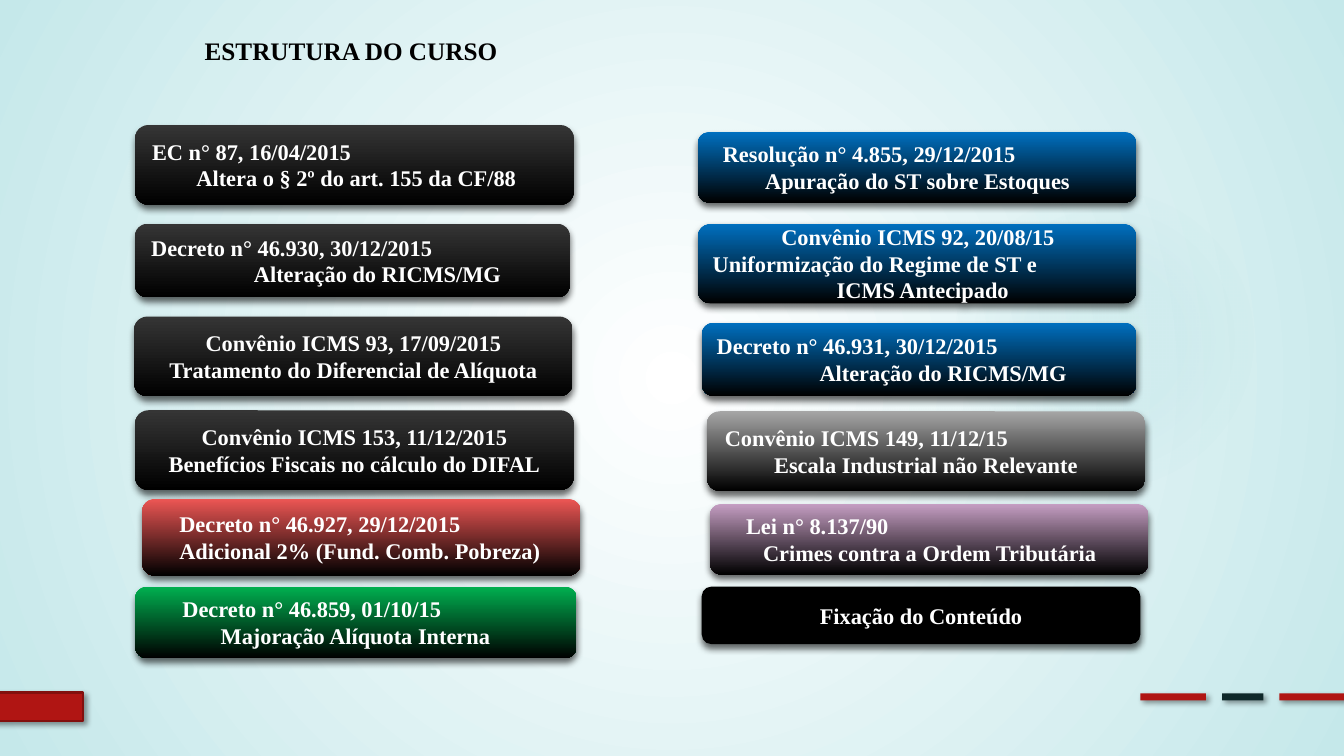
import pptx
import pptx.util
import pptx.dml.color
import pptx.enum.shapes
import pptx.enum.text
import pptx.oxml.ns
import lxml.etree

Inches = pptx.util.Inches
Pt = pptx.util.Pt
RGBColor = pptx.dml.color.RGBColor
SHAPE = pptx.enum.shapes.MSO_SHAPE
ALIGN = pptx.enum.text.PP_ALIGN
MIDDLE = pptx.enum.text.MSO_ANCHOR.MIDDLE
qn = pptx.oxml.ns.qn

BLACK = RGBColor(0x00, 0x00, 0x00)
WHITE = RGBColor(0xFF, 0xFF, 0xFF)
COAL = RGBColor(0x35, 0x35, 0x35)
BLUE = RGBColor(0x00, 0x70, 0xC0)
GREEN = RGBColor(0x00, 0xB0, 0x50)
CORAL = RGBColor(0xED, 0x56, 0x54)
GREY = RGBColor(0xA6, 0xA6, 0xA6)
LILAC = RGBColor(0xC5, 0x9E, 0xC3)
RED = RGBColor(0xB0, 0x15, 0x13)
MAROON = RGBColor(0x82, 0x10, 0x0E)
NAVY = RGBColor(0x0F, 0x28, 0x2A)
TEAL = RGBColor(0x50, 0xB9, 0xC1)
AQUA = RGBColor(0xC5, 0xE8, 0xEA)

FONT = {"name": "Times New Roman", "bold": True}
FRAME = {"margin_left": 0, "margin_right": 0, "margin_top": 0,
         "margin_bottom": 0, "vertical_anchor": MIDDLE, "word_wrap": True}
CARD_SHADE = (60, 5, 3, 90)
BAR_SHADE = (40, 4, 3, 45)

LEFT = [
    ((1.34, 1.24, 4.35, 0.79), COAL,
     [("EC n° 87, 16/04/2015", 0.17), ("Altera o § 2º do art. 155 da CF/88", 0.61)]),
    ((1.34, 2.22, 4.31, 0.73), COAL,
     [("Decreto n° 46.930, 30/12/2015", 0.16), ("Alteração do RICMS/MG", 1.18)]),
    ((1.33, 3.14, 4.35, 0.79), COAL,
     [("Convênio ICMS 93, 17/09/2015", None),
      ("Tratamento do Diferencial de Alíquota", None)]),
    ((1.34, 4.07, 4.35, 0.79), COAL,
     [("Convênio ICMS 153, 11/12/2015", None),
      ("Benefícios Fiscais no cálculo do DIFAL", None)]),
    ((1.41, 4.95, 4.35, 0.76), CORAL,
     [("Decreto n° 46.927, 29/12/2015", 0.37),
      ("Adicional 2% (Fund. Comb. Pobreza)", 0.37)]),
    ((1.34, 5.82, 4.38, 0.71), GREEN,
     [("Decreto n° 46.859, 01/10/15", 0.47), ("Majoração Alíquota Interna", 0.85)]),
]
RIGHT = [
    ((6.92, 1.31, 4.35, 0.7), BLUE,
     [("Resolução n° 4.855, 29/12/2015", 0.25), ("Apuração do ST sobre Estoques", 0.67)]),
    ((6.92, 2.22, 4.35, 0.79), BLUE,
     [("Convênio ICMS 92, 20/08/15", 0.83),
      ("Uniformização do Regime de ST e", 0.15), ("ICMS Antecipado", 1.38)]),
    ((6.96, 3.2, 4.31, 0.73), BLUE,
     [("Decreto n° 46.931, 30/12/2015", 0.15), ("Alteração do RICMS/MG", 1.17)]),
    ((7.01, 4.08, 4.35, 0.79), GREY,
     [("Convênio ICMS 149, 11/12/15", 0.18), ("Escala Industrial não Relevante", 0.67)]),
    ((7.04, 5, 4.35, 0.7), LILAC,
     [("Lei n° 8.137/90", 0.36), ("Crimes contra a Ordem Tributária", 0.53)]),
    ((6.96, 5.82, 4.35, 0.57), BLACK, [("Fixação do Conteúdo", None)]),
]


def apply(thing, values):
    for name, value in values.items():
        setattr(thing, name, value)


def add(parent, tag, **values):
    node = lxml.etree.SubElement(parent, qn(tag))
    for name, value in values.items():
        node.set(name, str(value))
    return node


def radial(fill, root, stops):
    fill.gradient()
    grad = root.find(".//" + qn("a:gradFill"))
    for child in list(grad):
        grad.remove(child)
    group = add(grad, "a:gsLst")
    for place, tint, alpha in stops:
        stop = add(group, "a:gs", pos=place * 1000)
        add(add(stop, "a:srgbClr", val=tint), "a:alpha", val=alpha * 1000)
    half = dict.fromkeys("ltrb", 50000)
    add(add(grad, "a:path", path="circle"), "a:fillToRect", **half)


def draw(slide, kind, box, shade=None):
    shape = slide.shapes.add_shape(kind, *map(Inches, box))
    shape.line.fill.background()
    shape.shadow.inherit = False
    if shade:
        alpha, blur, gap, angle = shade
        cast = add(shape.element.find(".//" + qn("a:effectLst")), "a:outerShdw",
                   blurRad=Pt(blur), dist=Pt(gap), dir=angle * 60000,
                   algn="ctr", rotWithShape=0)
        add(add(cast, "a:srgbClr", val=BLACK), "a:alpha", val=alpha * 1000)
    return shape


def paint(shape, tint):
    shape.fill.solid()
    shape.fill.fore_color.rgb = tint


def style(para, size, tint, indent):
    para.alignment = ALIGN.CENTER if indent is None else ALIGN.LEFT
    if indent is not None:
        props = para._p.get_or_add_pPr()
        props.set("marL", str(Inches(indent)))
        props.set("indent", "0")
    apply(para.font, {**FONT, "size": Pt(size)})
    para.font.color.rgb = tint


def card(slide, box, tint, lines):
    shape = draw(slide, SHAPE.ROUNDED_RECTANGLE, box, CARD_SHADE)
    if tint == BLACK:
        paint(shape, tint)
    else:
        shape.fill.gradient()
        shape.fill.gradient_angle = 270
        for stop, shade in zip(shape.fill.gradient_stops, (tint, BLACK)):
            stop.color.rgb = shade
    frame = shape.text_frame
    apply(frame, FRAME)
    inset = 0.05 * box[3]
    for i, (text, indent) in enumerate(lines):
        para = frame.add_paragraph() if i else frame.paragraphs[0]
        para.text = text
        para.line_spacing = Pt(19)
        style(para, 16, WHITE, None if indent is None else indent - inset)


def decor(slide, box):
    left, top, width, height = box
    glow = draw(slide, SHAPE.OVAL, (left + 9.41, top + 1.83, 3.08, 3.08))
    radial(glow.fill, glow.element, [(0, TEAL, 7), (36, TEAL, 6), (69, TEAL, 0)])
    base = top + height - 0.62
    tab = draw(slide, SHAPE.RECTANGLE, (left - 0.17, base - 0.01, 0.99, 0.28), BAR_SHADE)
    paint(tab, RED)
    tab.line.color.rgb = MAROON
    tab.line.width = Pt(1.5)
    right = left + width
    for back, wide, tint in ((0.64, 0.65, RED), (1.21, 0.41, NAVY), (2.02, 0.65, RED)):
        dash = draw(slide, SHAPE.RECTANGLE, (right - back, base, wide, 0.07), BAR_SHADE)
        paint(dash, tint)


def head(slide, box):
    title = slide.shapes.title
    apply(title, dict(zip(("left", "top", "width", "height"), map(Inches, box))))
    apply(title.text_frame, FRAME)
    para = title.text_frame.paragraphs[0]
    para.text = "ESTRUTURA DO CURSO"
    style(para, 18, BLACK, 1.35)


def main():
    deck = pptx.Presentation()
    deck.slide_width, deck.slide_height = Inches(13.33), Inches(7.5)
    slide = deck.slides.add_slide(deck.slide_layouts[5])
    radial(slide.background.fill, slide.element, [(0, WHITE, 100), (100, AQUA, 100)])
    decor(slide, (0, 0, 13.33, 7.5))
    head(slide, (0.68, 0.29, 9.65, 0.42))
    for box, tint, lines in LEFT + RIGHT:
        card(slide, box, tint, lines)
    deck.save("out.pptx")


if __name__ == "__main__":
    main()
